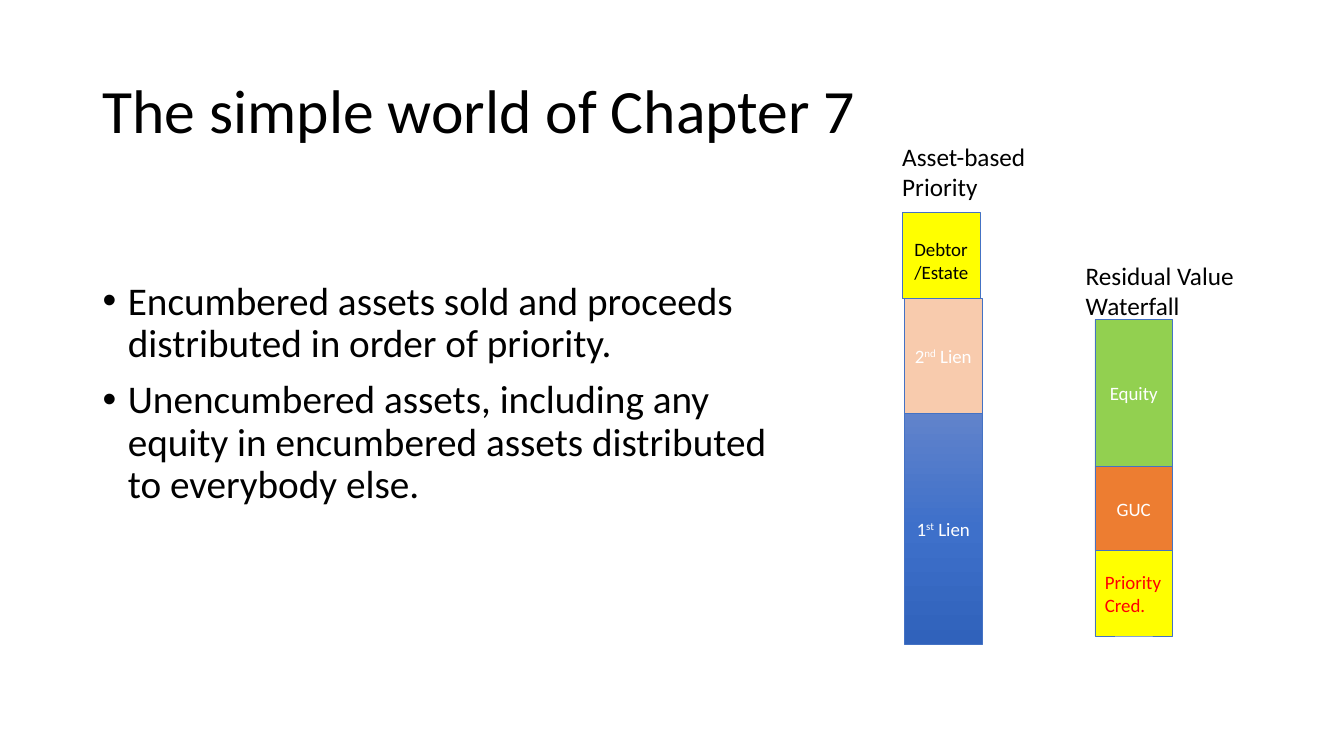
from copy import deepcopy

from lxml import etree
from pptx import Presentation
from pptx.dml.color import RGBColor
from pptx.enum import shapes, text
from pptx.util import Inches, Pt

BLACK = RGBColor(0x00, 0x00, 0x00)
WHITE = RGBColor(0xFF, 0xFF, 0xFF)
RED = RGBColor(0xFF, 0x00, 0x00)
YELLOW = RGBColor(0xFF, 0xFF, 0x00)
ORANGE = RGBColor(0xED, 0x7D, 0x31)
PEACH = RGBColor(0xF8, 0xCB, 0xAD)
GREEN = RGBColor(0x92, 0xD0, 0x50)
OUTLINE = RGBColor(0x44, 0x72, 0xC4)
BLUES = [RGBColor(0x61, 0x83, 0xCB), RGBColor(0x3E, 0x70, 0xCA), RGBColor(0x30, 0x62, 0xBB)]

LEFT, CENTER = text.PP_ALIGN.LEFT, text.PP_ALIGN.CENTER
TOP, MIDDLE = text.MSO_ANCHOR.TOP, text.MSO_ANCHOR.MIDDLE
BAR_W = 0.77


def write(tf, lines, size, color=BLACK, anchor=TOP, wrap=True, **fmt):
    """Fill a text frame; a line may be a list of runs whose odd items are superscript."""
    tf.word_wrap, tf.vertical_anchor = wrap, anchor
    for i, line in enumerate(lines):
        p = tf.paragraphs[0] if i == 0 else tf.add_paragraph()
        for name, value in fmt.items():
            setattr(p, name, value)
        for j, part in enumerate([line] if isinstance(line, str) else line):
            r = p.add_run()
            r.text = part
            r.font.name, r.font.size, r.font.color.rgb = "Calibri", Pt(size), color
            if j % 2:
                r.font._element.set("baseline", "30000")
    return tf


def add_text(slide, box, lines, size, **fmt):
    sp = slide.shapes.add_textbox(*map(Inches, box))
    return write(sp.text_frame, lines, size, **fmt)


def add_bullets(tf):
    for p in tf.paragraphs:
        pPr = p._p.get_or_add_pPr()
        pPr.set("marL", str(Inches(0.25)))
        pPr.set("indent", str(-Inches(0.25)))
        ns = "{%s}" % pPr.nsmap["a"]
        etree.SubElement(pPr, ns + "buFont", typeface="Arial")
        etree.SubElement(pPr, ns + "buChar", char="•")


def fill_gradient(fill, colors):
    fill.gradient()
    fill.gradient_angle = 270
    first = fill.gradient_stops[0]._gs
    first.addnext(deepcopy(first))
    for i, (stop, color) in enumerate(zip(fill.gradient_stops, colors)):
        stop.position = i / (len(colors) - 1)
        stop.color.rgb = color


def add_bar(slide, box, fill, lines=(), color=WHITE, alignment=CENTER):
    sp = slide.shapes.add_shape(shapes.MSO_SHAPE.RECTANGLE, *map(Inches, box))
    sp.shadow.inherit = False
    sp.line.color.rgb, sp.line.width = OUTLINE, Pt(0.5)
    if isinstance(fill, list):
        fill_gradient(sp.fill, fill)
    else:
        sp.fill.solid()
        sp.fill.fore_color.rgb = fill
    write(sp.text_frame, lines, 13.5, color, MIDDLE, alignment=alignment)


def add_title(slide, box):
    add_text(slide, box, ["The simple world of Chapter 7"], 44,
             anchor=MIDDLE, line_spacing=0.9)


def add_body(slide, box):
    tf = add_text(slide, box, [
        "Encumbered assets sold and proceeds distributed in order of priority.",
        "Unencumbered assets, including any equity in encumbered assets distributed "
        "to everybody else.",
    ], 28, line_spacing=0.9, space_before=Pt(10))
    add_bullets(tf)


def add_asset_priority(slide, x, y):
    # Heading
    add_text(slide, (x, y, 1.49, 0.71), ["Asset-based", "Priority"], 18, wrap=False)
    # Liens, with the debtor's share on top
    add_bar(slide, (x + 0.12, y + 2.75, BAR_W, 2.29), BLUES, [["1", "st", " Lien"]])
    add_bar(slide, (x + 0.12, y + 1.61, BAR_W, 1.14), PEACH, [["2", "nd", " Lien"]])
    add_bar(slide, (x + 0.1, y + 0.76, BAR_W, 0.85), YELLOW)
    add_text(slide, (x + 0.12, y + 0.96, 0.75, 0.56), ["Debtor", "/Estate"], 13.5, wrap=False)


def add_waterfall(slide, x, y):
    # Heading
    add_text(slide, (x, y, 1.69, 0.71), ["Residual Value", "Waterfall"], 18, wrap=False)
    # Stacked claims
    top = y + 0.64
    for height, fill, lines, color, alignment in [
        (1.46, GREEN, ["Equity"], WHITE, CENTER),
        (0.83, ORANGE, ["GUC"], WHITE, CENTER),
        (0.85, YELLOW, ["Priority", "Cred."], RED, LEFT),
    ]:
        add_bar(slide, (x + 0.19, top, BAR_W, height), fill, lines, color, alignment)
        top += height


def main():
    prs = Presentation()
    prs.slide_width, prs.slide_height = Inches(13.33), Inches(7.5)
    slide = prs.slides.add_slide(prs.slide_layouts[6])
    add_title(slide, (0.92, 0.4, 11.5, 1.45))
    add_body(slide, (0.92, 2.74, 7, 4.03))
    add_asset_priority(slide, 8.85, 1.35)
    add_waterfall(slide, 10.67, 2.53)
    prs.save("out.pptx")


if __name__ == "__main__":
    main()
